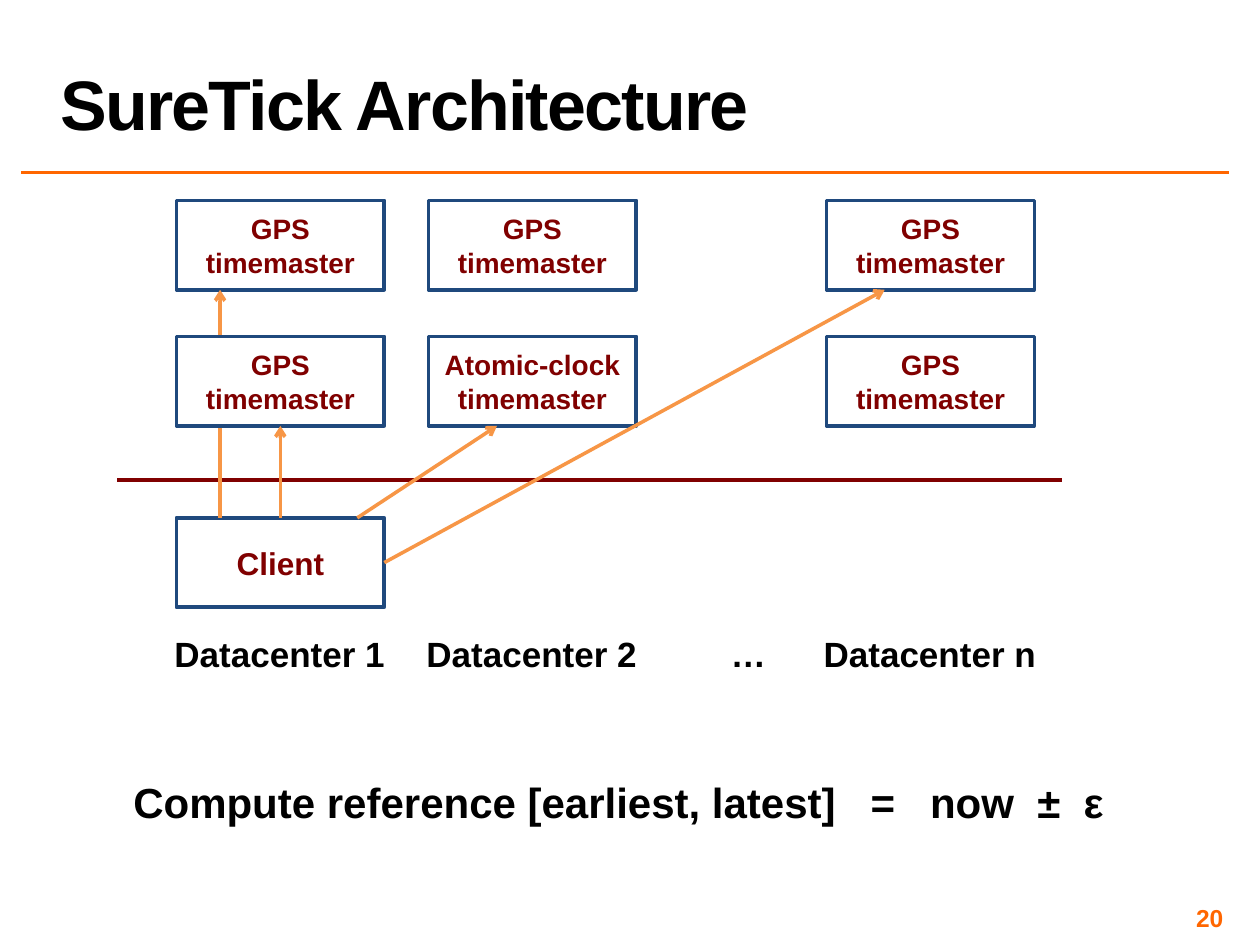
"""Build the clock architecture slide."""
from dataclasses import dataclass
from typing import NamedTuple

from lxml import etree
from pptx import Presentation
from pptx import util as u
from pptx.dml.color import RGBColor
from pptx.enum import shapes, text
from pptx.oxml import ns


@dataclass(frozen=True)
class Theme:
    font: str = "Arial"
    ink: str = "000000"
    accent: str = "FF6600"
    box_fill: str = "FFFFFF"
    box_line: str = "1F497D"
    box_text: str = "800000"
    arrow: str = "F79646"
    line_width: int = 2
    title_size: int = 40
    formula_size: int = 24
    label_size: int = 20
    client_size: int = 18
    box_size: int = 16
    number_size: int = 14


class Area(NamedTuple):
    left: float
    top: float
    width: float
    height: float

    def inches(self) -> list:
        return [u.Inches(value) for value in self]


class Point(NamedTuple):
    x: float
    y: float


class Box(NamedTuple):
    name: str
    column: int
    row: int
    size: int


class Label(NamedTuple):
    words: str
    center: float


THEME = Theme()
BOX_WIDTH, BOX_HEIGHT = 1.65, 0.71
COLUMNS = (1.4, 3.4, 6.56)
ROWS = (1.59, 2.67, 4.11)
TOP, RIGHT, BOTTOM = 0, 3, 2

BOXES = (
    Box("GPS timemaster", 0, 0, THEME.box_size),
    Box("GPS timemaster", 1, 0, THEME.box_size),
    Box("GPS timemaster", 2, 0, THEME.box_size),
    Box("Atomic-clock timemaster", 1, 1, THEME.box_size),
    Box("GPS timemaster", 2, 1, THEME.box_size),
    Box("Client", 0, 2, THEME.client_size),
)
NEAR_BOX = Box("GPS timemaster", 0, 1, THEME.box_size)
LABELS = (
    Label("Datacenter 1", 2.22),
    Label("Datacenter 2", 4.22),
    Label("…", 5.94),
    Label("Datacenter n", 7.38),
)


def grid_point(column: int, row: int, across: float, down: float) -> Point:
    """Return a point given as shares of a box in the grid."""
    return Point(COLUMNS[column] + across * BOX_WIDTH, ROWS[row] + down * BOX_HEIGHT)


def style(paragraph, size: int, color: str, alignment) -> None:
    """Format a whole paragraph."""
    paragraph.alignment = alignment
    font = paragraph.font
    font.name, font.size, font.bold = THEME.font, u.Pt(size), True
    font.color.rgb = RGBColor.from_string(color)


def add_box(slide, box: Box):
    """Draw one outlined box of the grid."""
    area = Area(COLUMNS[box.column], ROWS[box.row], BOX_WIDTH, BOX_HEIGHT)
    shape = slide.shapes.add_shape(shapes.MSO_SHAPE.RECTANGLE, *area.inches())
    shape.shadow.inherit = False
    shape.fill.solid()
    shape.fill.fore_color.rgb = RGBColor.from_string(THEME.box_fill)
    shape.line.color.rgb = RGBColor.from_string(THEME.box_line)
    shape.line.width = u.Pt(THEME.line_width)
    frame = shape.text_frame
    frame.text = box.name
    frame.word_wrap = True
    frame.vertical_anchor = text.MSO_ANCHOR.MIDDLE
    style(frame.paragraphs[0], box.size, THEME.box_text, text.PP_ALIGN.CENTER)
    return shape


def add_line(slide, start: Point, end: Point, color: str, arrow: bool = False):
    """Draw a straight line, with an open arrowhead if wanted."""
    ends = [u.Inches(value) for value in (*start, *end)]
    connector = slide.shapes.add_connector(shapes.MSO_CONNECTOR.STRAIGHT, *ends)
    connector.line.color.rgb = RGBColor.from_string(color)
    connector.line.width = u.Pt(THEME.line_width)
    if arrow:
        etree.SubElement(connector.line._get_or_add_ln(), ns.qn("a:tailEnd"), type="arrow")
    etree.SubElement(connector._element.spPr, ns.qn("a:effectLst"))
    return connector


def add_caption(slide, words: str, area: Area, size: int) -> None:
    """Draw one unwrapped, centred line of text."""
    frame = slide.shapes.add_textbox(*area.inches()).text_frame
    frame.text = words
    frame.word_wrap = False
    frame.auto_size = text.MSO_AUTO_SIZE.SHAPE_TO_FIT_TEXT
    style(frame.paragraphs[0], size, THEME.ink, text.PP_ALIGN.CENTER)


def add_title(slide, words: str) -> None:
    """Fill and place the title placeholder."""
    title = slide.shapes.title
    title.left, title.top, title.width, title.height = Area(0.38, 0.02, 9.37, 1.17).inches()
    frame = title.text_frame
    frame.text = words
    frame.auto_size = text.MSO_AUTO_SIZE.NONE
    frame.vertical_anchor = text.MSO_ANCHOR.BOTTOM
    paragraph = frame.paragraphs[0]
    paragraph.line_spacing = 0.8
    style(paragraph, THEME.title_size, THEME.ink, text.PP_ALIGN.LEFT)
    paragraph.runs[0].font._element.set("spc", "-100")


def add_number(slide, number: str) -> None:
    """Draw the slide number at the lower right."""
    frame = slide.shapes.add_textbox(*Area(7.42, 7.17, 2.33, 0.23).inches()).text_frame
    frame.text = number
    frame.word_wrap = True
    frame.vertical_anchor = text.MSO_ANCHOR.MIDDLE
    frame.margin_left = frame.margin_right = u.Inches(0.04)
    frame.margin_top = frame.margin_bottom = u.Inches(0.04)
    style(frame.paragraphs[0], THEME.number_size, THEME.accent, text.PP_ALIGN.RIGHT)


def main() -> None:
    """Compose and save the slide."""
    presentation = Presentation()
    presentation.slide_width, presentation.slide_height = u.Inches(10), u.Inches(7.5)
    slide = presentation.slides.add_slide(presentation.slide_layouts.get_by_name("Title Only"))

    add_line(slide, Point(0.17, 1.37), Point(9.75, 1.37), THEME.accent)
    add_title(slide, "SureTick Architecture")
    for label in LABELS:
        add_caption(slide, label.words, Area(label.center - 0.95, 4.97, 1.9, 0.44), THEME.label_size)

    client = [add_box(slide, box) for box in BOXES][-1]
    add_line(slide, Point(0.93, 3.81), Point(8.43, 3.81), THEME.box_text)
    add_number(slide, "20")

    add_line(slide, grid_point(0, 2, 0.87, 0), grid_point(1, 1, 0.33, 1), THEME.arrow, True)
    far_arrow = add_line(slide, grid_point(0, 2, 1, 0.5), grid_point(2, 0, 0.28, 1), THEME.arrow, True)
    far_arrow.begin_connect(client, RIGHT)
    add_line(slide, grid_point(0, 2, 0.21, 0), grid_point(0, 0, 0.21, 1), THEME.arrow, True)

    near_box = add_box(slide, NEAR_BOX)
    near_arrow = add_line(slide, grid_point(0, 2, 0.5, 0), grid_point(0, 1, 0.5, 1), THEME.arrow, True)
    near_arrow.begin_connect(client, TOP)
    near_arrow.end_connect(near_box, BOTTOM)

    formula = "Compute reference [earliest, latest]   =   now  ±  ε"
    add_caption(slide, formula, Area(0.92, 6.11, 7.98, 0.5), THEME.formula_size)
    presentation.save("out.pptx")


if __name__ == "__main__":
    main()
